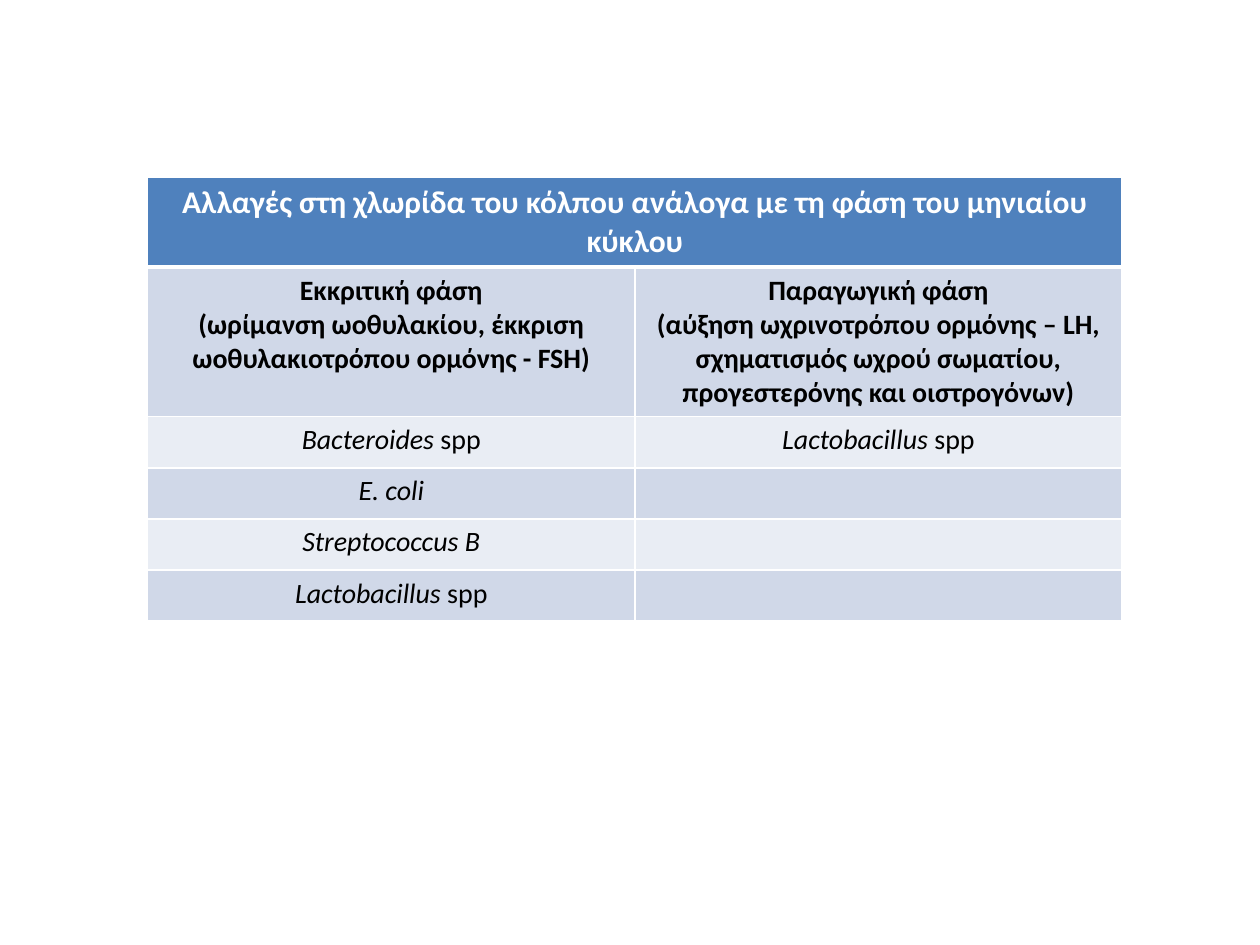
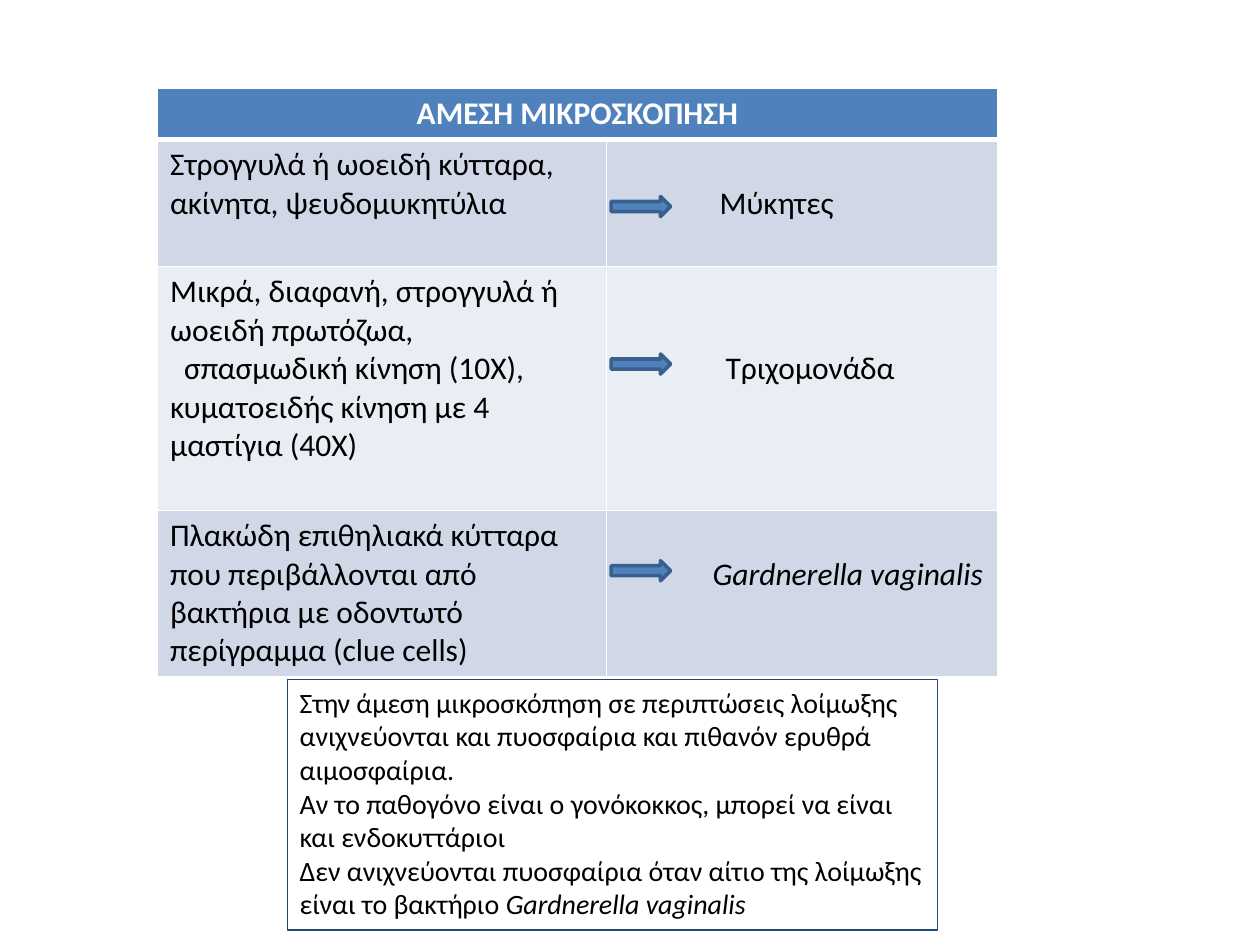
from dataclasses import dataclass

from lxml import etree
from pptx import Presentation
from pptx.dml.color import RGBColor
from pptx.enum import shapes, text
from pptx.oxml import ns
from pptx.util import Pt


@dataclass(frozen=True)
class Theme:
    font: str = "Calibri"
    title: int = 18
    body: int = 18
    small: int = 16
    accent: str = "4F81BD"
    accent_line: str = "3A5F8C"
    frame: str = "1F497D"
    bands: tuple = ("D0D8E8", "E9EDF4")
    light: str = "FFFFFF"
    dark: str = "000000"
    thin: float = 1
    thick: float = 3
    line: float = 22  # height of one body line


THEME = Theme()
CENTER, LEFT = text.PP_ALIGN.CENTER, text.PP_ALIGN.LEFT


def rgb(value):
    return RGBColor.from_string(value)


def write(tf, lines, size, color=THEME.dark, bold=False, align=LEFT):
    """Write one paragraph per line; *stars* mark italics."""
    for i, line in enumerate(lines):
        p = tf.paragraphs[0] if i == 0 else tf.add_paragraph()
        p.alignment = align
        p.font.name, p.font.size, p.font.bold = THEME.font, Pt(size), bold
        p.font.color.rgb = rgb(color)
        for j, part in enumerate(line.split("*")):
            if part:
                r = p.add_run()
                r.text = part
                if j % 2:
                    r.font.italic = True
        if len(p.runs) == 1 and p.runs[0].font.italic:
            p.runs[0].font.italic = None
            p.font.italic = True


def set_borders(cell, top, bottom):
    tc_pr = cell._tc.get_or_add_tcPr()
    widths = {"L": THEME.thin, "R": THEME.thin, "T": top, "B": bottom}
    for side, width in widths.items():
        ln = etree.SubElement(tc_pr, ns.qn(f"a:ln{side}"), w=str(Pt(width)))
        fill = etree.SubElement(ln, ns.qn("a:solidFill"))
        etree.SubElement(fill, ns.qn("a:srgbClr"), val=THEME.light)


def add_banded_table(slide, left, top, col_widths, row_heights, title):
    """Add a table with a title row across it and banded rows below."""
    frame = slide.shapes.add_table(
        len(row_heights), len(col_widths), Pt(left), Pt(top),
        Pt(sum(col_widths)), Pt(sum(row_heights)))
    table = frame.table
    table.horz_banding = False
    for column, width in zip(table.columns, col_widths):
        column.width = Pt(width)
    for i, (row, height) in enumerate(zip(table.rows, row_heights)):
        row.height = Pt(height)
        for cell in row.cells:
            set_borders(cell, THEME.thick if i == 1 else THEME.thin,
                        THEME.thick if i == 0 else THEME.thin)
            cell.fill.solid()
            cell.fill.fore_color.rgb = rgb(
                THEME.bands[(i - 1) % 2] if i else THEME.accent)
    header = table.cell(0, 0)
    header.merge(table.cell(0, len(col_widths) - 1))
    write(header.text_frame, [title], THEME.title, THEME.light, True, CENTER)
    return table


def add_arrow(slide, left, top):
    sp = slide.shapes.add_shape(shapes.MSO_SHAPE.RIGHT_ARROW,
                                Pt(left), Pt(top), Pt(34), Pt(11.5))
    sp.shadow.inherit = False
    sp.fill.solid()
    sp.fill.fore_color.rgb = rgb(THEME.accent)
    sp.line.color.rgb = rgb(THEME.accent_line)
    sp.line.width = Pt(2)


def add_framed_note(slide, left, top, width, height, lines):
    sp = slide.shapes.add_textbox(Pt(left), Pt(top), Pt(width), Pt(height))
    sp.line.color.rgb = rgb(THEME.frame)
    sp.line.width = Pt(0.75)
    tf = sp.text_frame
    tf.word_wrap = True
    tf.auto_size = text.MSO_AUTO_SIZE.SHAPE_TO_FIT_TEXT
    write(tf, lines, THEME.small)


def add_flora_slide(slide):
    table = add_banded_table(
        slide, 84.4, 101.5, [278.4] * 2, [51, 85] + [29.2] * 4,
        "Αλλαγές στη χλωρίδα του κόλπου ανάλογα με τη φάση του μηνιαίου κύκλου")
    phases = [
        ["Εκκριτική φάση",
         "(ωρίμανση ωοθυλακίου, έκκριση ωοθυλακιοτρόπου ορμόνης - FSH)"],
        ["Παραγωγική φάση",
         "(αύξηση ωχρινοτρόπου ορμόνης – LH, σχηματισμός ωχρού σωματίου, "
         "προγεστερόνης και οιστρογόνων)"],
    ]
    bacteria = [
        ["*Bacteroides* spp", "*E. coli*", "*Streptococcus B*",
         "*Lactobacillus* spp"],
        ["*Lactobacillus* spp"],
    ]
    for col, (phase, names) in enumerate(zip(phases, bacteria)):
        write(table.cell(1, col).text_frame, phase, THEME.small,
              bold=True, align=CENTER)
        for row, name in enumerate(names, 2):
            write(table.cell(row, col).text_frame, [name], THEME.small,
                  align=CENTER)


def add_microscopy_slide(slide):
    table = add_banded_table(slide, 90, 50.6, [256.7, 223.3],
                             [29.2, 72.5, 139.3, 95], "ΑΜΕΣΗ ΜΙΚΡΟΣΚΟΠΗΣΗ")
    # findings, organism, its left margin, lines above it, arrow top
    rows = [
        (["Στρογγυλά ή ωοειδή κύτταρα, ακίνητα, ψευδομυκητύλια"],
         "Μύκητες", 64.5, 1, 112.3),
        (["Μικρά, διαφανή, στρογγυλά ή ωοειδή πρωτόζωα,",
          "σπασμωδική κίνηση (10Χ), κυματοειδής κίνηση με 4 μαστίγια (40Χ)"],
         "Τριχομονάδα", 68, 2, 202.3),
        (["Πλακώδη επιθηλιακά κύτταρα που περιβάλλονται από βακτήρια με "
          "οδοντωτό περίγραμμα (clue cells)"],
         "*Gardnerella vaginalis*", 60.5, 1, 320.4),
    ]
    for i, (findings, organism, margin, lines_above, arrow_top) in enumerate(rows, 1):
        tf = table.cell(i, 0).text_frame
        write(tf, findings, THEME.body)
        for p in tf.paragraphs[1:]:
            p._p.get_or_add_pPr().set("indent", str(Pt(8)))
        cell = table.cell(i, 1)
        cell.margin_left, cell.margin_right = Pt(margin), Pt(0)
        cell.margin_top = Pt(3.6 + lines_above * THEME.line)
        write(cell.text_frame, [organism], THEME.body)
        add_arrow(slide, 349.2, arrow_top)
    add_framed_note(slide, 164.2, 388.1, 371.5, 143.3, [
        "Στην άμεση μικροσκόπηση σε περιπτώσεις λοίμωξης ανιχνεύονται και "
        "πυοσφαίρια και πιθανόν ερυθρά αιμοσφαίρια.",
        "Αν το παθογόνο είναι ο γονόκοκκος, μπορεί να είναι και ενδοκυττάριοι",
        "Δεν ανιχνεύονται πυοσφαίρια όταν αίτιο της λοίμωξης είναι το "
        "βακτήριο *Gardnerella vaginalis*",
    ])


def main():
    prs = Presentation()
    prs.slide_width, prs.slide_height = Pt(720), Pt(540)
    for build in (add_flora_slide, add_microscopy_slide):
        build(prs.slides.add_slide(prs.slide_layouts[6]))
    prs.save("out.pptx")


if __name__ == "__main__":
    main()
